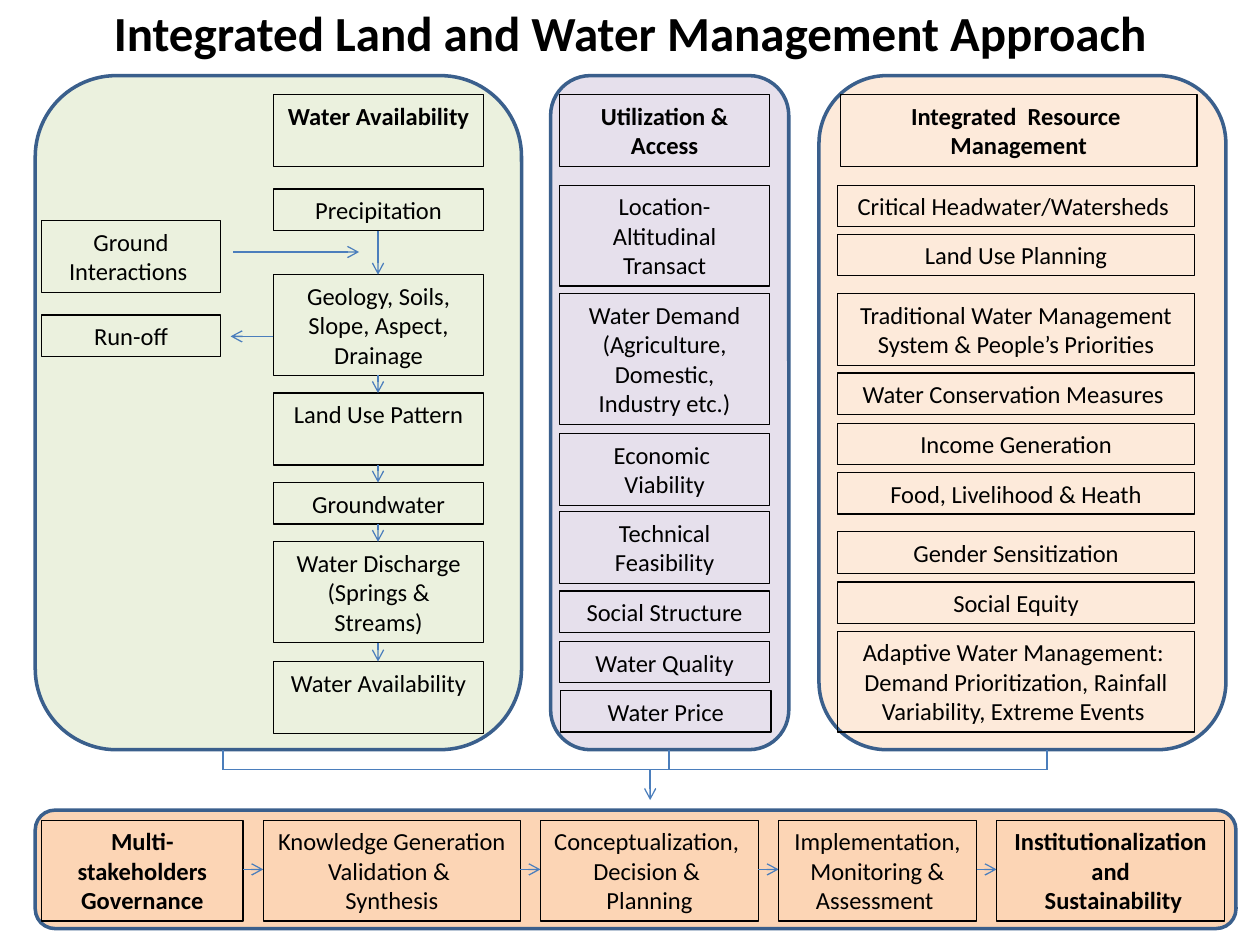
"""Build the Integrated Land and Water Management Approach slide."""
from dataclasses import dataclass

from lxml import etree
from pptx import Presentation
from pptx.dml.color import RGBColor
from pptx.enum.shapes import MSO_CONNECTOR, MSO_SHAPE
from pptx.enum.text import MSO_ANCHOR, MSO_AUTO_SIZE, PP_ALIGN
from pptx.oxml.ns import qn
from pptx.util import Inches, Pt

ROUNDED = MSO_SHAPE.ROUNDED_RECTANGLE
STRAIGHT = MSO_CONNECTOR.STRAIGHT
TOP = MSO_ANCHOR.TOP
FIXED = MSO_AUTO_SIZE.NONE
CENTER = PP_ALIGN.CENTER


@dataclass(frozen=True)
class Theme:
    font: str = "Calibri"
    text: str = "000000"
    paper: str = "FFFFFF"
    arrow: str = "4B7EBC"
    outline: str = "3A5F8C"
    green: str = "EBF1DE"
    purple: str = "E6E0EC"
    peach: str = "FDEADA"
    orange: str = "FCD5B5"
    title_size: int = 28
    body_size: int = 14
    thin: float = 0.75
    thick: float = 2


def height_of(rows):
    return round(0.1 + 0.235 * rows, 2)


class Diagram:
    def __init__(self, page, theme):
        self.page = page
        self.theme = theme

    def stroke(self, item, color, width):
        item.line.color.rgb = RGBColor.from_string(color)
        item.line.width = Pt(width)

    def panel(self, left, top, width, height, fill):
        panel = self.page.shapes.add_shape(
            ROUNDED, Inches(left), Inches(top), Inches(width), Inches(height))
        panel.shadow.inherit = False
        panel.fill.solid()
        panel.fill.fore_color.rgb = RGBColor.from_string(fill)
        self.stroke(panel, self.theme.outline, self.theme.thick)

    def box(self, left, top, width, height, text, bold=False, size=None, border=None):
        box = self.page.shapes.add_textbox(
            Inches(left), Inches(top), Inches(width), Inches(height))
        self.stroke(box, border or self.theme.text, self.theme.thin)
        frame = box.text_frame
        layout = {"word_wrap": True, "auto_size": FIXED, "vertical_anchor": TOP}
        for name, value in layout.items():
            setattr(frame, name, value)
        style = {"name": self.theme.font, "bold": bold,
                 "size": Pt(size or self.theme.body_size)}
        for index, line in enumerate(text.split("\n")):
            para = frame.add_paragraph() if index else frame.paragraphs[0]
            para.alignment = CENTER
            span = para.add_run()
            span.text = line
            for name, value in style.items():
                setattr(span.font, name, value)
            span.font.color.rgb = RGBColor.from_string(self.theme.text)

    def column(self, left, width, entries):
        for top, rows, text in entries:
            self.box(left, top, width, height_of(rows), text)

    def line(self, x1, y1, x2, y2, arrow=True):
        line = self.page.shapes.add_connector(
            STRAIGHT, Inches(x1), Inches(y1), Inches(x2), Inches(y2))
        self.stroke(line, self.theme.arrow, self.theme.thin)
        if arrow:
            etree.SubElement(line.line._get_or_add_ln(), qn("a:tailEnd"), type="arrow")
        etree.SubElement(line._element.spPr, qn("a:effectLst"))


WATER = [
    (1.5, 1, "Precipitation"),
    (2.18, 3, "Geology, Soils, Slope, Aspect, Drainage"),
    (3.12, 2, "Land Use Pattern"),
    (3.83, 1, "Groundwater"),
    (4.3, 3, "Water Discharge\n(Springs & Streams)"),
    (5.25, 2, "Water Availability"),
]
EXCHANGES = [(1.75, 2, "Ground\nInteractions "), (2.5, 1, "Run-off")]
UTILIZATION = [
    (1.47, 3, "Location-Altitudinal Transact"),
    (2.33, 4, "Water Demand (Agriculture, Domestic, Industry etc.)"),
    (3.44, 2, "Economic  Viability"),
    (4.06, 2, "Technical Feasibility"),
    (4.69, 1, "Social Structure"),
    (5.09, 1, "Water Quality"),
]
RESOURCES = [
    (1.47, 1, "Critical Headwater/Watersheds "),
    (1.86, 1, "Land Use Planning"),
    (2.33, 2, "Traditional Water Management System & People’s Priorities"),
    (2.96, 1, "Water Conservation Measures "),
    (3.36, 1, "Income Generation"),
    (3.75, 1, "Food, Livelihood & Heath"),
    (4.22, 1, "Gender Sensitization"),
    (4.62, 1, "Social Equity"),
    (5.01, 3, "Adaptive Water Management:  Demand Prioritization, "
              "Rainfall Variability, Extreme Events "),
]
HEADINGS = [
    (2.17, 1.67, "Water Availability"),
    (4.44, 1.67, "Utilization & Access"),
    (6.67, 2.83, "Integrated  Resource \nManagement"),
]
STEPS = [
    (1.6, True, "Multi-stakeholders Governance"),
    (2.04, False, "Knowledge Generation Validation & \nSynthesis"),
    (1.73, False, "Conceptualization, \nDecision & \nPlanning"),
    (1.57, False, "Implementation, Monitoring & Assessment "),
    (1.81, True, "Institutionalization\nand\n Sustainability"),
]


def main():
    deck = Presentation()
    deck.slide_width, deck.slide_height = Inches(10), Inches(7.5)
    theme = Theme()
    diagram = Diagram(deck.slides.add_slide(deck.slide_layouts[6]), theme)

    diagram.panel(0.28, 6.43, 9.53, 0.94, theme.orange)
    for left, width, fill in [(6.5, 3.23, theme.peach), (4.37, 1.89, theme.purple),
                              (0.28, 3.86, theme.green)]:
        diagram.panel(left, 0.6, width, 5.35, fill)

    diagram.box(0.75, -0.03, 8.5, 0.57, "Integrated Land and Water Management Approach",
                True, theme.title_size, theme.paper)
    for left, width, text in HEADINGS:
        diagram.box(left, 0.75, width, height_of(2), text, True)

    diagram.column(2.17, 1.67, WATER)
    diagram.column(0.33, 1.42, EXCHANGES)
    diagram.column(4.44, 1.67, UTILIZATION)
    diagram.column(4.45, 1.67, [(5.48, 1, "Water Price")])
    diagram.column(6.65, 2.83, RESOURCES)

    for (top, rows, _), (next_top, _, _) in zip(WATER, WATER[1:]):
        diagram.line(3, top + height_of(rows), 3, next_top)
    diagram.line(1.85, 2, 2.85, 2)
    diagram.line(2.17, 2.67, 1.83, 2.67)

    for x in (1.77, 5.31, 8.31):
        diagram.line(x, 5.95, x, 6.11, arrow=False)
    diagram.line(1.77, 6.11, 8.31, 6.11, arrow=False)
    diagram.line(5.16, 6.11, 5.16, 6.35)

    left, gap = 0.33, 0.16
    for index, (width, bold, text) in enumerate(STEPS):
        if index:
            diagram.line(left - gap, 6.9, left, 6.9)
        diagram.box(left, 6.51, width, height_of(3), text, bold)
        left += width + gap

    deck.save("out.pptx")


if __name__ == "__main__":
    main()
